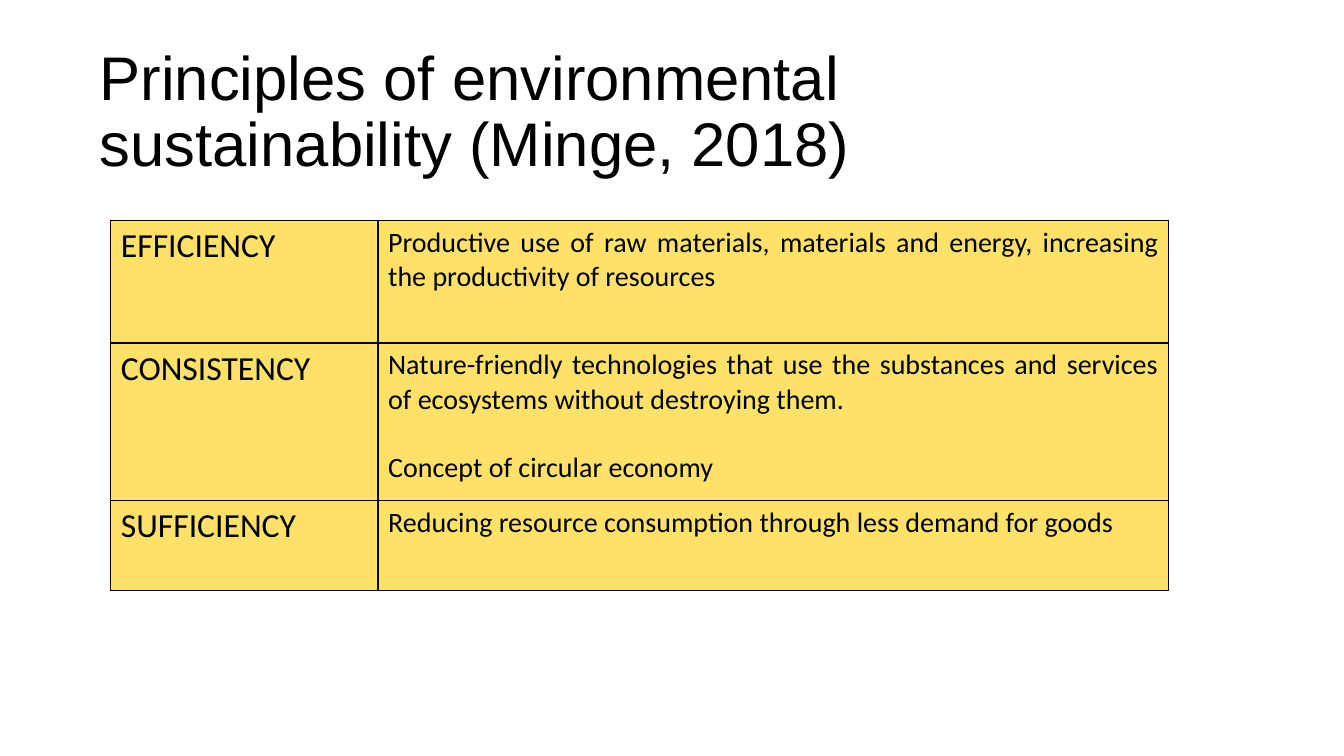
import dataclasses

import lxml.etree
import pptx
import pptx.dml.color
import pptx.enum.text
import pptx.oxml.ns
import pptx.util


@dataclasses.dataclass(frozen=True)
class Theme:
    title_font: str = "Arial"
    table_font: str = "Calibri"
    text: str = "000000"
    border: str = "000000"
    cell: str = "FDCD05"
    cell_opacity: int = 60
    title_size: int = 44
    principle_size: int = 24
    meaning_size: int = 20
    thin: int = 1
    thick: int = 2


class SlideBuilder:
    """Places elements on one slide; lengths are percentages of its size."""

    def __init__(self, presentation, theme):
        self.presentation = presentation
        self.theme = theme
        self.slide = presentation.slides.add_slide(presentation.slide_layouts[6])

    def across(self, percent):
        return round(self.presentation.slide_width * percent / 100)

    def down(self, percent):
        return round(self.presentation.slide_height * percent / 100)

    def add_text(self, paragraph, text, font_name, size):
        run = paragraph.add_run()
        run.text = text
        run.font.name = font_name
        run.font.size = pptx.util.Pt(size)
        run.font.color.rgb = pptx.dml.color.RGBColor.from_string(self.theme.text)

    def title(self, text, left, top, width, height):
        shape = self.slide.shapes.add_textbox(
            self.across(left), self.down(top), self.across(width), self.down(height))
        frame = shape.text_frame
        frame.word_wrap = True
        frame.vertical_anchor = pptx.enum.text.MSO_ANCHOR.MIDDLE
        paragraph = frame.paragraphs[0]
        paragraph.line_spacing = 0.9
        self.add_text(paragraph, text, self.theme.title_font, self.theme.title_size)

    def table(self, rows, left, top, widths, heights):
        table = self.slide.shapes.add_table(
            len(rows), len(widths), self.across(left), self.down(top),
            self.across(sum(widths)), self.down(sum(heights))).table
        table.first_row = table.horz_banding = False
        for column, width in zip(table.columns, widths):
            column.width = self.across(width)
        for index, (row, height) in enumerate(zip(rows, heights)):
            table.rows[index].height = self.down(height)
            principle, meanings = row
            self.principle_cell(table.cell(index, 0), principle)
            self.meaning_cell(table.cell(index, 1), meanings)
            for cell in table.rows[index].cells:
                self.fill(cell)
                # The line under the first row is thicker
                self.borders(cell,
                             self.theme.thick if index == 1 else self.theme.thin,
                             self.theme.thick if index == 0 else self.theme.thin)

    def principle_cell(self, cell, text):
        self.add_text(cell.text_frame.paragraphs[0], text,
                      self.theme.table_font, self.theme.principle_size)

    def meaning_cell(self, cell, texts):
        frame = cell.text_frame
        for index, text in enumerate(texts):
            paragraph = frame.add_paragraph() if index else frame.paragraphs[0]
            paragraph.alignment = pptx.enum.text.PP_ALIGN.JUSTIFY
            if index:
                paragraph.space_before = pptx.util.Pt(1.2 * self.theme.meaning_size)
            self.add_text(paragraph, text, self.theme.table_font, self.theme.meaning_size)

    def fill(self, cell):
        cell.fill.solid()
        cell.fill.fore_color.rgb = pptx.dml.color.RGBColor.from_string(self.theme.cell)
        color = cell._tc.tcPr.find(".//" + pptx.oxml.ns.qn("a:srgbClr"))
        alpha = lxml.etree.SubElement(color, pptx.oxml.ns.qn("a:alpha"))
        alpha.set("val", str(self.theme.cell_opacity * 1000))

    def borders(self, cell, top, bottom):
        sides = {"L": self.theme.thin, "R": self.theme.thin, "T": top, "B": bottom}
        for position, (side, points) in enumerate(sides.items()):
            line = lxml.etree.Element(pptx.oxml.ns.qn("a:ln" + side))
            line.set("w", str(int(pptx.util.Pt(points))))
            solid = lxml.etree.SubElement(line, pptx.oxml.ns.qn("a:solidFill"))
            color = lxml.etree.SubElement(solid, pptx.oxml.ns.qn("a:srgbClr"))
            color.set("val", self.theme.border)
            cell._tc.tcPr.insert(position, line)


PRINCIPLES = [
    ("EFFICIENCY", ["Productive use of raw materials, materials and energy, "
                    "increasing the productivity of resources"]),
    ("CONSISTENCY", ["Nature-friendly technologies that use the substances and "
                     "services of ecosystems without destroying them.",
                     "Concept of circular economy"]),
    ("SUFFICIENCY", ["Reducing resource consumption through less demand for goods"]),
]


def main():
    presentation = pptx.Presentation()
    presentation.slide_width = pptx.util.Inches(13.33)
    presentation.slide_height = pptx.util.Inches(7.5)
    builder = SlideBuilder(presentation, Theme())

    # Heading
    builder.title("Principles of environmental sustainability (Minge, 2018)",
                  left=6.68, top=5.33, width=80.27, height=19.33)

    # Principles and their meanings
    builder.table(PRINCIPLES, left=8.25, top=29.2,
                  widths=[19.88, 58.81], heights=[16.2, 20.8, 11.87])

    presentation.save("out.pptx")


if __name__ == "__main__":
    main()
